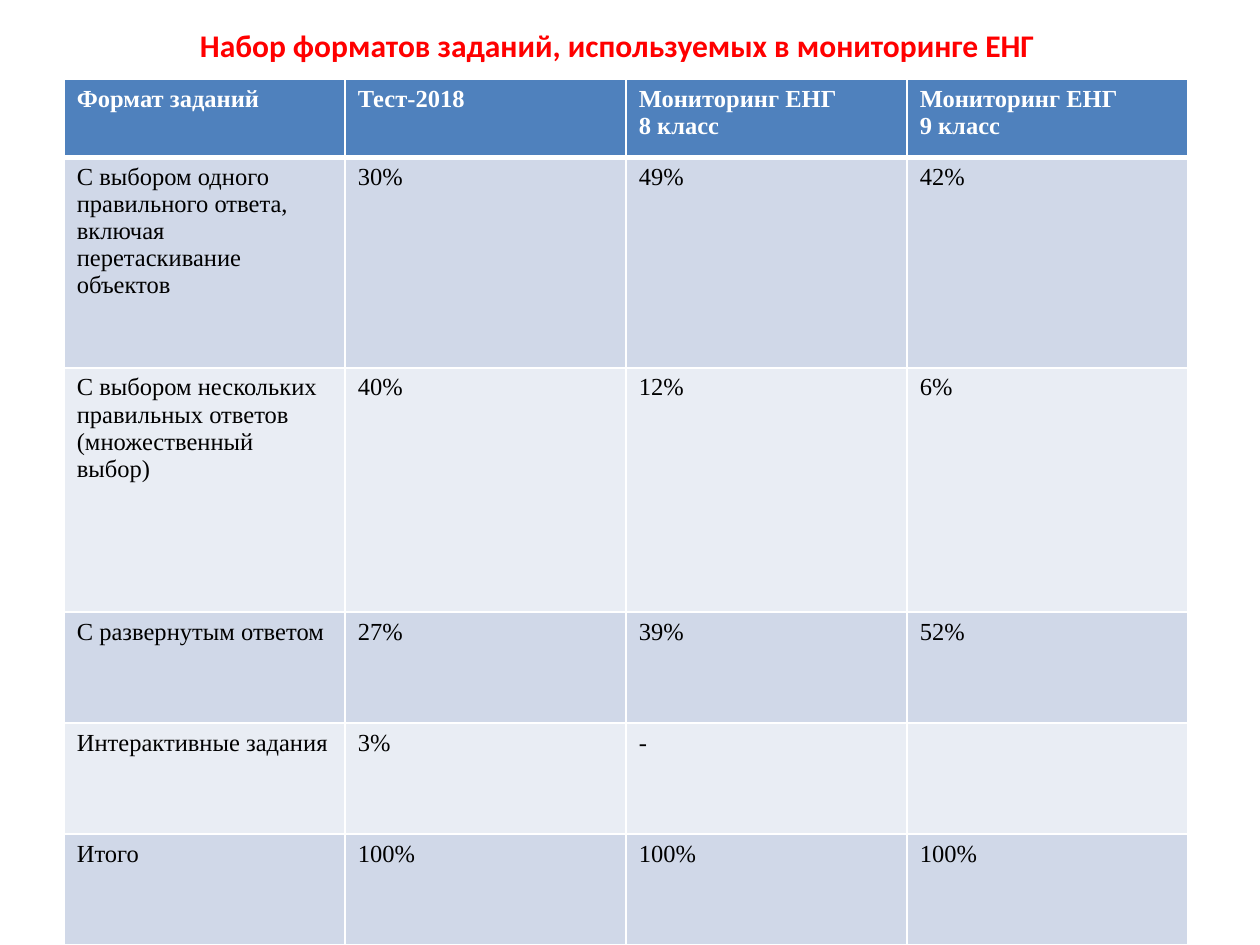
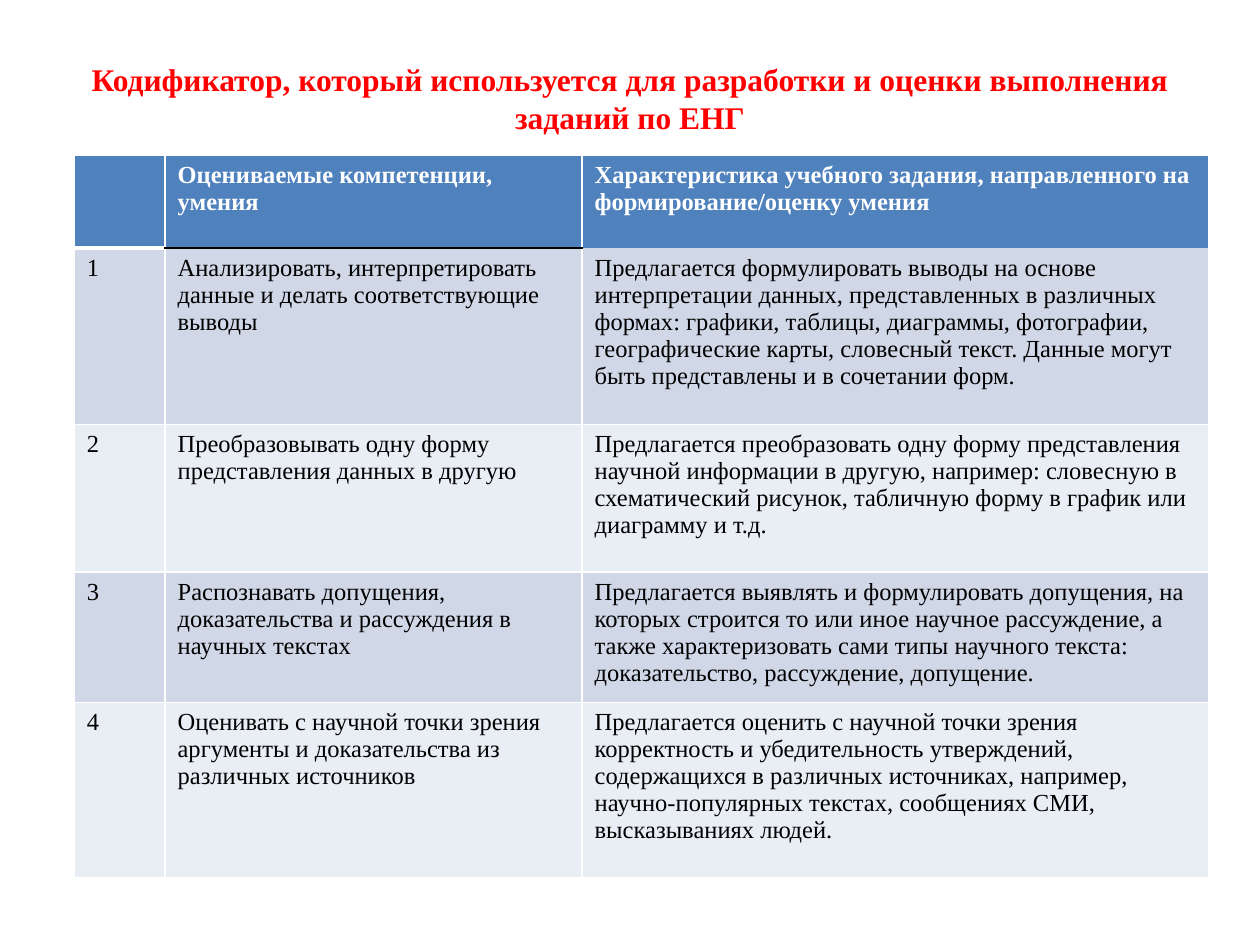
import pptx
import pptx.dml.color
import pptx.enum.text
import pptx.oxml.ns
import pptx.util
from lxml import etree
from pptx.util import Inches

RGBColor = pptx.dml.color.RGBColor
RED = RGBColor(0xFF, 0x00, 0x00)
WHITE = RGBColor(0xFF, 0xFF, 0xFF)
BLACK = RGBColor(0x00, 0x00, 0x00)
HEADER_BLUE = RGBColor(0x4F, 0x81, 0xBD)
BANDS = (RGBColor(0xD0, 0xD8, 0xE8), RGBColor(0xE9, 0xED, 0xF4))

TABLE_FONT = "Times New Roman"
TITLE_SIZE = 18
TABLE_SIZE = 14

FORMAT_ROWS = [
    ("Формат заданий", "Тест-2018", "Мониторинг ЕНГ\n8 класс", "Мониторинг ЕНГ\n9 класс"),
    ("С выбором одного правильного ответа, включая перетаскивание объектов",
     "30%", "49%", "42%"),
    ("С выбором нескольких правильных ответов (множественный выбор)",
     "40%", "12%", "6%"),
    ("С развернутым ответом", "27%", "39%", "52%"),
    ("Интерактивные задания", "3%", "-", ""),
    ("Итого", "100%", "100%", "100%"),
]

SKILL_ROWS = [
    ("", "Оцениваемые компетенции, умения",
     "Характеристика учебного задания, направленного на формирование/оценку умения"),
    ("1", "Анализировать, интерпретировать данные и делать соответствующие выводы",
     "Предлагается формулировать выводы на основе интерпретации данных, представленных "
     "в различных формах: графики, таблицы, диаграммы, фотографии, географические карты, "
     "словесный текст. Данные могут быть представлены и в сочетании форм."),
    ("2", "Преобразовывать одну форму представления данных в другую",
     "Предлагается преобразовать одну форму представления научной информации в другую, "
     "например: словесную в схематический рисунок, табличную форму в график или "
     "диаграмму и т.д."),
    ("3", "Распознавать допущения, доказательства и рассуждения в научных текстах",
     "Предлагается выявлять и формулировать допущения, на которых строится то или иное "
     "научное рассуждение, а также характеризовать сами типы научного текста: "
     "доказательство, рассуждение, допущение."),
    ("4", "Оценивать c научной точки зрения аргументы и доказательства из различных источников",
     "Предлагается оценить с научной точки зрения корректность и убедительность "
     "утверждений, содержащихся в различных источниках, например, научно-популярных "
     "текстах, сообщениях СМИ, высказываниях людей."),
]


def style_paragraph(paragraph, font_name, size, color, bold):
    paragraph.font.name = font_name
    paragraph.font.size = pptx.util.Pt(size)
    paragraph.font.color.rgb = color
    paragraph.font.bold = bold


def add_title(slide, text, font_name, left, top, width, height):
    shape = slide.shapes.add_textbox(Inches(left), Inches(top), Inches(width), Inches(height))
    frame = shape.text_frame
    frame.word_wrap = True
    frame.vertical_anchor = pptx.enum.text.MSO_ANCHOR.MIDDLE
    frame.text = text
    paragraph = frame.paragraphs[0]
    paragraph.alignment = pptx.enum.text.PP_ALIGN.CENTER
    style_paragraph(paragraph, font_name, TITLE_SIZE, RED, True)


def set_border(cell, side, color, width=1):
    """Draw one side (L, R, T or B) of a cell; a color of None hides it."""
    qn = pptx.oxml.ns.qn
    properties = cell._tc.get_or_add_tcPr()
    line = etree.SubElement(properties, qn(f"a:ln{side}"), w=str(pptx.util.Pt(width)))
    if color is None:
        etree.SubElement(line, qn("a:noFill"))
    else:
        fill = etree.SubElement(line, qn("a:solidFill"))
        etree.SubElement(fill, qn("a:srgbClr"), val=str(color))


def add_banded_table(slide, rows, left, top, column_widths, row_heights, special_rules=None):
    """Add a header and banded rows; special_rules maps a column to its (color, width) under the header."""
    special_rules = special_rules or {}
    table = slide.shapes.add_table(
        len(rows), len(column_widths), Inches(left), Inches(top),
        Inches(sum(column_widths)), Inches(sum(row_heights))).table
    for column, width in zip(table.columns, column_widths):
        column.width = Inches(width)
    for row, height in zip(table.rows, row_heights):
        row.height = Inches(height)

    for row_index, texts in enumerate(rows):
        is_header = row_index == 0
        for column_index, text in enumerate(texts):
            cell = table.cell(row_index, column_index)
            header_rule = special_rules.get(column_index, (WHITE, 3))
            set_border(cell, "L", WHITE)
            set_border(cell, "R", WHITE)
            set_border(cell, "T", *(header_rule if row_index == 1 else (WHITE, 1)))
            set_border(cell, "B", *(header_rule if is_header else (WHITE, 1)))
            cell.fill.solid()
            cell.fill.fore_color.rgb = HEADER_BLUE if is_header else BANDS[(row_index - 1) % 2]
            cell.text = text
            for paragraph in cell.text_frame.paragraphs:
                style_paragraph(paragraph, TABLE_FONT, TABLE_SIZE,
                                WHITE if is_header else BLACK, is_header)


def add_formats_slide(presentation):
    slide = presentation.slides.add_slide(presentation.slide_layouts[6])
    add_title(slide, "Набор форматов заданий, используемых в мониторинге ЕНГ",
              "Calibri", 0.4, -0.19, 9, 1.1)
    add_banded_table(slide, FORMAT_ROWS, 0.51, 0.63, [2.23] * 4,
                     [0.62, 1.67, 1.94, 0.88, 0.88, 0.88])


def add_skills_slide(presentation):
    slide = presentation.slides.add_slide(presentation.slide_layouts[6])
    add_title(slide, "Кодификатор, который используется для разработки и оценки "
              "выполнения заданий по ЕНГ", TABLE_FONT, 0.5, 0, 9, 1.55)
    add_banded_table(slide, SKILL_ROWS, 0.59, 1.23, [0.72, 3.31, 4.97],
                     [0.74, 1.4, 1.17, 0.97, 1.39],
                     special_rules={1: (BLACK, 1), 2: (None, 1)})


def main():
    presentation = pptx.Presentation()
    presentation.slide_width = Inches(10)
    presentation.slide_height = Inches(7.5)
    add_formats_slide(presentation)
    add_skills_slide(presentation)
    presentation.save("out.pptx")


if __name__ == "__main__":
    main()
